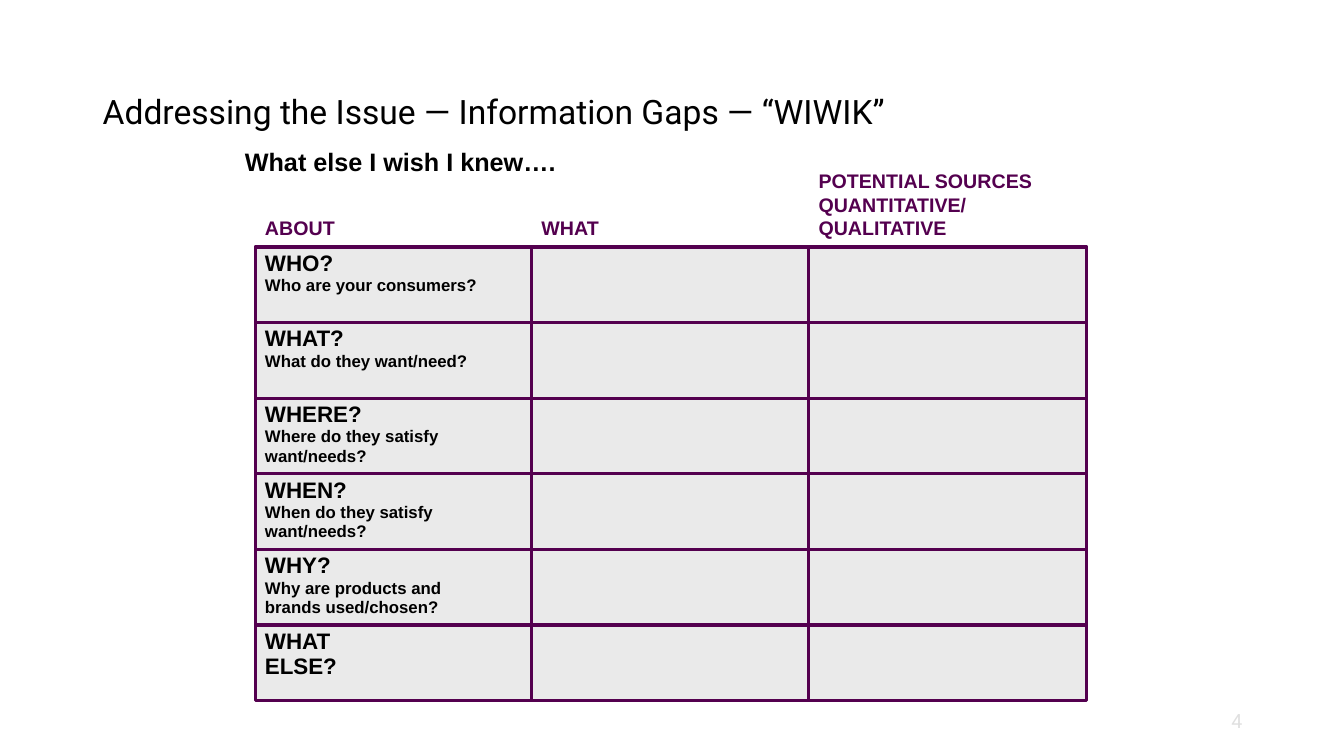
from lxml.etree import SubElement
from pptx import Presentation
from pptx.dml.color import RGBColor
from pptx.enum.shapes import MSO_CONNECTOR, MSO_SHAPE
from pptx.enum.text import MSO_ANCHOR, PP_ALIGN
from pptx.oxml.ns import qn
from pptx.util import Inches, Pt

BLACK = RGBColor(0x00, 0x00, 0x00)
PLUM = RGBColor(0x54, 0x00, 0x4F)
GRAY = RGBColor(0xEA, 0xEA, 0xEA)
PALE = RGBColor(0xE0, 0xE0, 0xE0)

LEFT, TOP, WIDE, HIGH = 2.53, 2.45, 8.25, 0.75
COLS = [LEFT, 5.27, 8.02]
HEADS = [
    (2.09, 1.33, 0.33, ["ABOUT"]),
    (2.09, 0.78, 0.34, ["WHAT"]),
    (1.63, 2.72, 0.81, ["POTENTIAL SOURCES", "QUANTITATIVE/\nQUALITATIVE"]),
]
ROWS = [
    ("WHO?", "Who are your consumers?"),
    ("WHAT?", "What do they want/need?"),
    ("WHERE?", "Where do they satisfy want/needs?"),
    ("WHEN?", "When do they satisfy want/needs?"),
    ("WHY?", "Why are products and\nbrands used/chosen?"),
    ("WHAT\nELSE?", ""),
]


class Board:
    """Holds the slide and its style, and draws each kind of element."""

    def __init__(self, slide):
        self.shapes = slide.shapes
        self.font = "Arial"
        self.line = Pt(2.25)

    def band(self, x, y, w, h):
        """Draw one filled row."""
        box = self.shapes.add_shape(
            MSO_SHAPE.RECTANGLE, Inches(x), Inches(y), Inches(w), Inches(h))
        box.shadow.inherit = False
        box.fill.solid()
        box.fill.fore_color.rgb = GRAY
        box.line.color.rgb = PLUM
        box.line.width = self.line

    def rule(self, x, top, end):
        """Draw one upright line."""
        rule = self.shapes.add_connector(
            MSO_CONNECTOR.STRAIGHT, Inches(x), Inches(top), Inches(x), Inches(end))
        rule.line.color.rgb = PLUM
        rule.line.width = self.line
        SubElement(rule._element.spPr, qn("a:effectLst"))

    def text(self, x, y, w, h, paras, color=BLACK, bold=True, font=None,
             space=1.0, anchor=MSO_ANCHOR.TOP, align=PP_ALIGN.LEFT):
        """Write paragraphs, each a list of (words, size) runs."""
        box = self.shapes.add_textbox(Inches(x), Inches(y), Inches(w), Inches(h))
        frame = box.text_frame
        frame.word_wrap = True
        frame.vertical_anchor = anchor
        for i, runs in enumerate(paras):
            para = frame.add_paragraph() if i else frame.paragraphs[0]
            para.line_spacing = space
            para.alignment = align
            for words, size in runs:
                for j, part in enumerate(words.split("\n")):
                    if j:
                        para.add_line_break()
                        SubElement(para._p[-1], qn("a:rPr"), sz=str(size * 100))
                    if part:
                        run = para.add_run()
                        run.text = part
                        run.font.name = font or self.font
                        run.font.size = Pt(size)
                        run.font.bold = bold
                        run.font.color.rgb = color


def main():
    """Build and save the slide."""
    deck = Presentation()
    deck.slide_width, deck.slide_height = Inches(13.33), Inches(7.5)
    board = Board(deck.slides.add_slide(deck.slide_layouts[6]))

    for i in range(len(ROWS)):
        board.band(LEFT, TOP + i * HIGH, WIDE, HIGH)
    for x in COLS[1:]:
        board.rule(x, TOP, TOP + len(ROWS) * HIGH)

    board.text(0.92, 0.4, 11.5, 1.45,
               [[("Addressing the Issue — Information Gaps — “WIWIK”", 24)]],
               bold=False, font="Roboto", space=0.9, anchor=MSO_ANCHOR.MIDDLE)
    board.text(2.33, 1.4, 6.89, 0.4, [[("What else I wish I knew….", 18)]])

    for x, (y, w, h, lines) in zip(COLS, HEADS):
        board.text(x, y, w, h, [[(line, 14)] for line in lines], PLUM)
    for i, (head, note) in enumerate(ROWS):
        runs = [(head, 16)]
        if note:
            runs += [("\n", 14), (note, 12)]
        board.text(LEFT, TOP - 0.01 + i * HIGH, 2.7, 0.68, [runs], space=0.95)

    board.text(9.42, 6.95, 3, 0.4, [[("4", 14)]], PALE, bold=False,
               font="Roboto", anchor=MSO_ANCHOR.MIDDLE, align=PP_ALIGN.RIGHT)
    deck.save("out.pptx")


if __name__ == "__main__":
    main()
